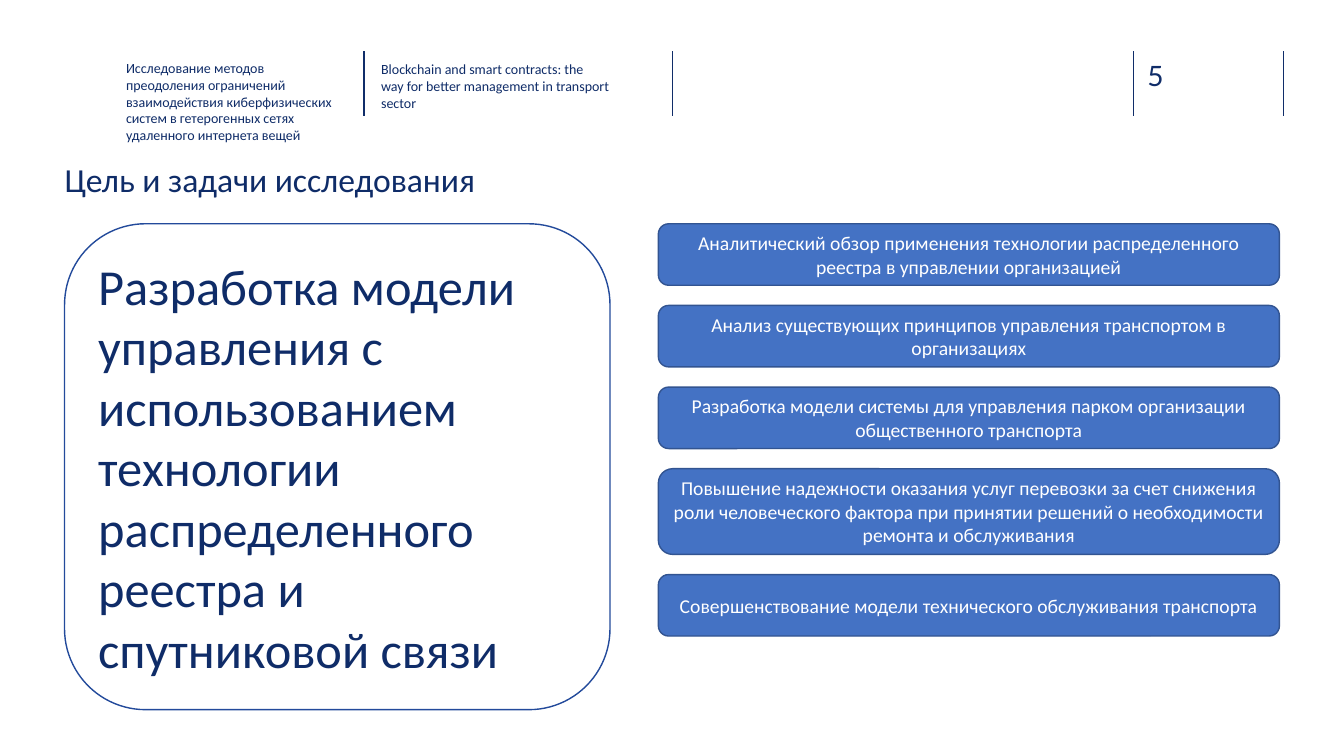
"""Build the slide that states the research goal and its five tasks."""
from lxml import etree
from pptx import Presentation
from pptx import util as u
from pptx.dml.color import RGBColor
from pptx.enum import shapes, text
from pptx.oxml import ns

NAVY = RGBColor(0x0F, 0x2C, 0x68)
RULE_NAVY = RGBColor(0x10, 0x2D, 0x69)
GOAL_BORDER = RGBColor(0x23, 0x4A, 0x9B)
TASK_FILL = RGBColor(0x44, 0x72, 0xC4)
TASK_BORDER = RGBColor(0x32, 0x54, 0x91)
WHITE = RGBColor(0xFF, 0xFF, 0xFF)

TITLE = "Цель и задачи исследования"
HEADERS = [
    ("Исследование методов преодоления ограничений взаимодействия киберфизических "
     "систем в гетерогенных сетях удаленного интернета вещей", (1.25, 0.59, 2.08, 0.45)),
    ("Blockchain and smart contracts: the way for better management in transport sector",
     (3.78, 0.6, 2.26, 0.45)),
]
GOAL = ("Разработка модели управления с использованием технологии "
        "распределенного реестра и спутниковой связи")
TASKS = [
    ("Аналитический обзор применения технологии распределенного реестра "
     "в управлении организацией", 0.61),
    ("Анализ существующих принципов управления транспортом в организациях", 0.61),
    ("Разработка модели системы для управления парком организации "
     "общественного транспорта", 0.61),
    ("Повышение надежности оказания услуг перевозки за счет снижения роли человеческого "
     "фактора при принятии решений о необходимости ремонта и обслуживания", 0.85),
    ("Совершенствование модели технического обслуживания транспорта", 0.61),
]
RULE_POSITIONS = (3.61, 6.67, 11.24, 12.73)
RULE_TOP, RULE_BOTTOM = 0.51, 1.15
CONTENT_TOP, TASK_GAP = 2.22, 0.2


def write(frame, content, size=14, color=NAVY, font="Calibri", margin=None,
          align=text.PP_ALIGN.LEFT, anchor=text.MSO_ANCHOR.TOP):
    frame.word_wrap = True
    frame.auto_size = text.MSO_AUTO_SIZE.NONE
    frame.vertical_anchor = anchor
    if margin is not None:
        frame.margin_left = frame.margin_right = u.Inches(margin)
        frame.margin_top = frame.margin_bottom = u.Inches(margin)
    frame.text = content
    paragraph = frame.paragraphs[0]
    properties = paragraph._p.get_or_add_pPr()
    properties.set("marL", "0")
    properties.set("indent", "0")
    etree.SubElement(properties, ns.qn("a:buNone"))
    paragraph.alignment = align
    paragraph.space_before = u.Pt(0)
    paragraph.font.size = u.Pt(size)
    paragraph.font.name = font
    paragraph.font.color.rgb = color


class SlideBuilder:
    def __init__(self, slide, font="Calibri", color=NAVY):
        self.slide = slide
        self.font = font
        self.color = color

    def placeholder(self, shape, content, box, size):
        shape.left, shape.top, shape.width, shape.height = map(u.Inches, box)
        write(shape.text_frame, content, size=size, color=self.color, font=self.font, margin=0)

    def label(self, content, box, size, font, color):
        shape = self.slide.shapes.add_textbox(*map(u.Inches, box))
        write(shape.text_frame, content, size=size, color=color, font=font, margin=0)

    def rule(self, x, top, bottom):
        line = self.slide.shapes.add_connector(
            shapes.MSO_CONNECTOR.STRAIGHT, *map(u.Inches, (x, top, x, bottom)))
        line.line.color.rgb = RULE_NAVY
        line.line.width = u.Pt(1)
        etree.SubElement(line._element.spPr, ns.qn("a:effectLst"))

    def card(self, content, box, border, fill=None, **style):
        shape = self.slide.shapes.add_shape(
            shapes.MSO_SHAPE.ROUNDED_RECTANGLE, *map(u.Inches, box))
        shape.shadow.inherit = False
        if fill is None:
            shape.fill.background()
        else:
            shape.fill.solid()
            shape.fill.fore_color.rgb = fill
        shape.line.color.rgb = border
        shape.line.width = u.Pt(1)
        write(shape.text_frame, content, font=self.font,
              anchor=text.MSO_ANCHOR.MIDDLE, **style)


def main():
    presentation = Presentation()
    presentation.slide_width = u.Inches(13.33)
    presentation.slide_height = u.Inches(7.5)
    slide = presentation.slides.add_slide(presentation.slide_layouts.get_by_name("Two Content"))
    builder = SlideBuilder(slide)

    for x in RULE_POSITIONS:
        builder.rule(x, RULE_TOP, RULE_BOTTOM)
    builder.label("5", (11.38, 0.58, 0.73, 0.34), size=20, font="Lato", color=RULE_NAVY)

    title, *bodies = slide.placeholders
    builder.placeholder(title, TITLE, (0.64, 1.58, 11.72, 0.85), size=24)
    for body, (content, box) in zip(bodies, HEADERS):
        builder.placeholder(body, content, box, size=10)

    top = CONTENT_TOP
    for content, height in TASKS:
        builder.card(content, (6.53, top, 6.16, height), TASK_BORDER, fill=TASK_FILL,
                     color=WHITE, align=text.PP_ALIGN.CENTER)
        top += height + TASK_GAP
    builder.card(GOAL, (0.64, CONTENT_TOP, 5.41, 4.82), GOAL_BORDER, size=36)

    presentation.save("out.pptx")


if __name__ == "__main__":
    main()
